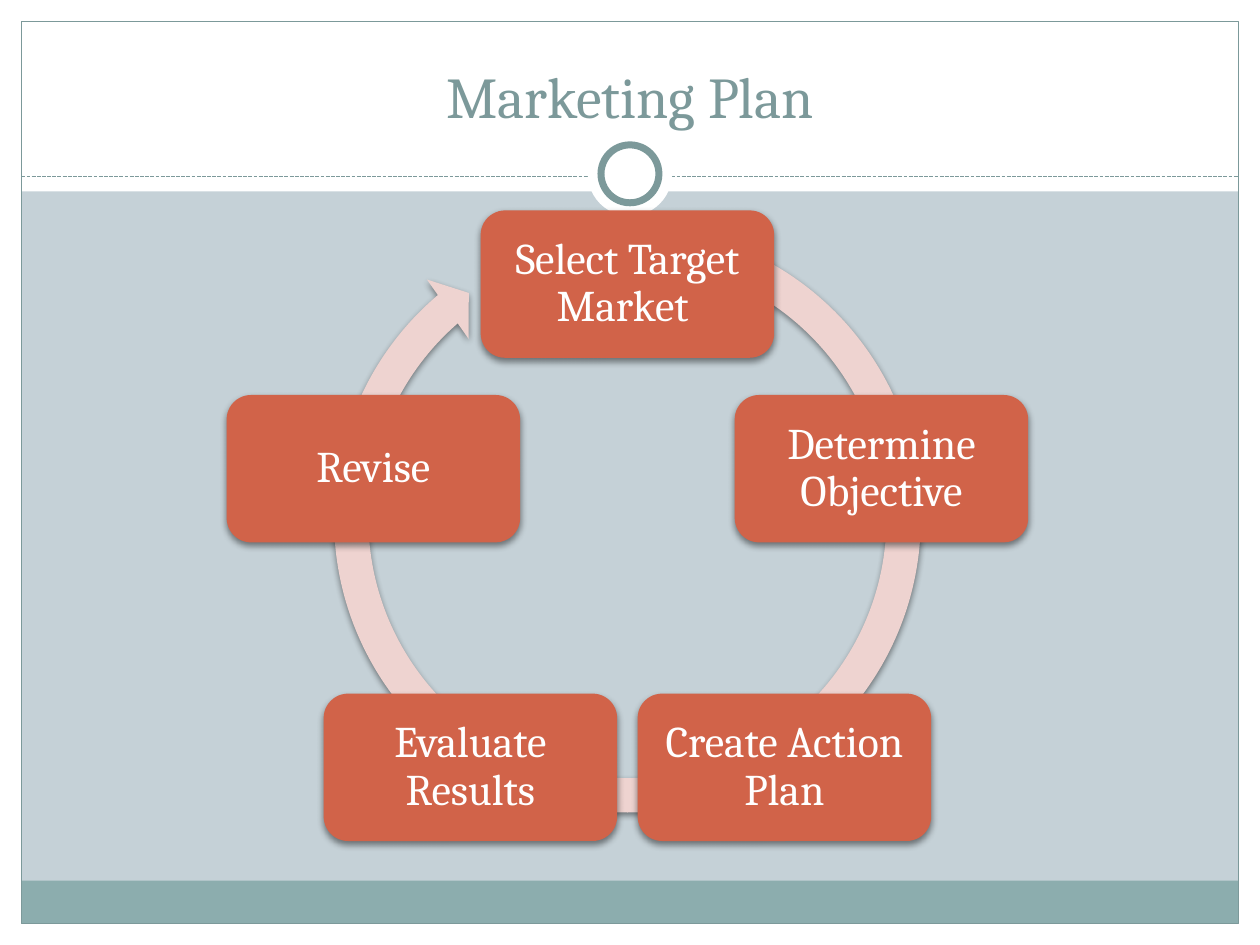
import math

from lxml import etree
from pptx import Presentation
from pptx.dml.color import RGBColor
from pptx.enum.dml import MSO_LINE
from pptx.enum.shapes import MSO_CONNECTOR, MSO_SHAPE
from pptx.enum.text import MSO_ANCHOR, PP_ALIGN
from pptx.oxml.ns import qn
from pptx.util import Inches, Pt

RECT, OVAL = MSO_SHAPE.RECTANGLE, MSO_SHAPE.OVAL
ROUNDED, CIRCULAR_ARROW = MSO_SHAPE.ROUNDED_RECTANGLE, MSO_SHAPE.CIRCULAR_ARROW
STRAIGHT, DASH = MSO_CONNECTOR.STRAIGHT, MSO_LINE.SQUARE_DOT
MIDDLE, BOTTOM, CENTER = MSO_ANCHOR.MIDDLE, MSO_ANCHOR.BOTTOM, PP_ALIGN.CENTER

WHITE = RGBColor(0xFF, 0xFF, 0xFF)
MIST = RGBColor(0xC5, 0xD1, 0xD7)
SAGE = RGBColor(0x7C, 0x99, 0x9A)
TEAL = RGBColor(0x8C, 0xAD, 0xAE)
RUST = RGBColor(0xD1, 0x63, 0x49)
BLUSH = RGBColor(0xEE, 0xD3, 0xD0)

FONT = "Cambria"
STEPS = ["Select Target Market ", "Determine Objective", "Create Action Plan",
         "Evaluate Results", "Revise"]


def add_block(slide, kind, box, fill=None, line=None, weight=0.75):
    """Add a flat preset shape in a box of inches."""
    block = slide.shapes.add_shape(kind, *map(Inches, box))
    block.shadow.inherit = False
    if fill is None:
        block.fill.background()
    else:
        block.fill.solid()
        block.fill.fore_color.rgb = fill
    if line is None:
        block.line.fill.background()
    else:
        block.line.color.rgb = line
        block.line.width = Pt(weight)
    return block


def add_soft_shadow(block):
    """Give a shape a soft black shadow that falls straight down."""
    effects = block._element.spPr.find(qn("a:effectLst"))
    shadow = etree.SubElement(effects, qn("a:outerShdw"), blurRad=str(Pt(4)),
                              dist=str(Pt(2)), dir="5400000", rotWithShape="0")
    color = etree.SubElement(shadow, qn("a:srgbClr"), val="000000")
    etree.SubElement(color, qn("a:alpha"), val="45000")


def write_text(holder, text, size, color, anchor=MIDDLE, spacing=1.0,
               inset_x=0.1, inset_y=0.05):
    """Write one centred paragraph into a shape or text box."""
    frame = holder.text_frame
    frame.word_wrap = True
    frame.vertical_anchor = anchor
    frame.margin_left = frame.margin_right = Inches(inset_x)
    frame.margin_top = frame.margin_bottom = Inches(inset_y)
    paragraph = frame.paragraphs[0]
    paragraph.alignment = CENTER
    paragraph.line_spacing = spacing
    run = paragraph.add_run()
    run.text = text
    run.font.name = FONT
    run.font.size = Pt(size)
    run.font.color.rgb = color


def add_frame(slide, width, height, margin=0.17, header=1.52, footer=0.34):
    """Draw the white margins, header band, footer band and border."""
    inner_width = width - 2 * margin
    bottom = height - margin
    for box in [(0, bottom, width, margin), (0, 0, width, header),
                (0, 0, margin, height), (width - margin, 0, margin, height)]:
        add_block(slide, RECT, box, fill=WHITE)
    add_block(slide, RECT, (margin, bottom - footer, inner_width, footer), fill=TEAL)
    add_block(slide, RECT, (margin, margin, inner_width, height - 2 * margin), line=SAGE)


def add_header(slide, left, top, width, height, title):
    """Draw the title, the dashed rule and the ring at its middle."""
    rule_y = top + height
    rule = slide.shapes.add_connector(STRAIGHT, Inches(left), Inches(rule_y),
                                      Inches(left + width), Inches(rule_y))
    rule.line.color.rgb = SAGE
    rule.line.width = Pt(0.75)
    rule.line.dash_style = DASH
    etree.SubElement(rule._element.spPr, qn("a:effectLst"))

    center_x, center_y = left + width / 2, rule_y - 0.02
    for size, line in [(0.67, None), (0.46, SAGE)]:
        box = (center_x - size / 2, center_y - size / 2, size, size)
        add_block(slide, OVAL, box, fill=WHITE, line=line, weight=4)

    heading = slide.shapes.add_textbox(Inches(left + 0.16), Inches(top + 0.08),
                                       Inches(width - 0.32), Inches(0.83))
    write_text(heading, title, 33, SAGE, anchor=BOTTOM)


def add_cycle(slide, left, top, width, height, steps):
    """Place the steps clockwise on a circle over a circular arrow."""
    step_width, step_height, arrow_size = 2.33, 1.17, 4.96
    radius = 2.12
    center_x, center_y = left + width / 2, top + step_height / 2 + radius

    arrow_box = (center_x - arrow_size / 2, top - 0.03, arrow_size, arrow_size)
    arrow = add_block(slide, CIRCULAR_ARROW, arrow_box, fill=BLUSH)
    for index, value in enumerate([0.055, 3.307, 137.666, 173.917, 0.058]):
        arrow.adjustments[index] = value
    add_soft_shadow(arrow)

    for index, step in enumerate(steps):
        angle = 2 * math.pi * index / len(steps)
        x = center_x + radius * math.sin(angle) - step_width / 2
        y = center_y - radius * math.cos(angle) - step_height / 2
        card = add_block(slide, ROUNDED, (x, y, step_width, step_height), fill=RUST)
        add_soft_shadow(card)
        write_text(card, step, 25, WHITE, spacing=0.9, inset_x=0.16, inset_y=0.16)


def main():
    """Build the marketing plan slide."""
    deck = Presentation()
    deck.slide_width, deck.slide_height = Inches(10), Inches(7.5)
    slide = deck.slides.add_slide(deck.slide_layouts[6])
    slide.background.fill.solid()
    slide.background.fill.fore_color.rgb = MIST
    add_frame(slide, 10, 7.5)
    add_header(slide, 0.17, 0.17, 9.66, 1.23, "Marketing Plan")
    add_cycle(slide, 1.8, 1.67, 6.36, 5, STEPS)
    deck.save("out.pptx")


if __name__ == "__main__":
    main()
